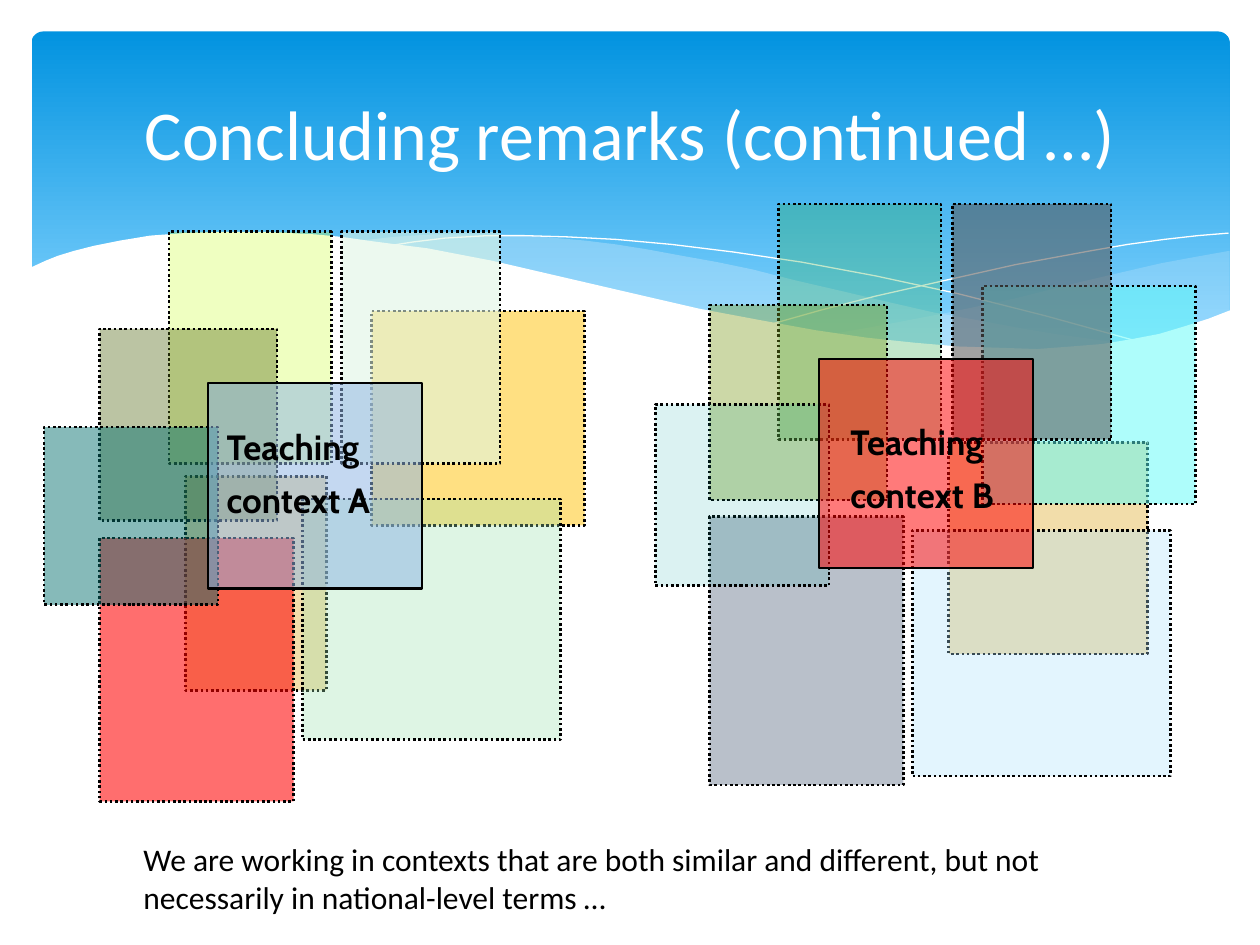
from lxml import etree
from pptx import Presentation
from pptx.dml.color import RGBColor
from pptx.enum.dml import MSO_LINE
from pptx.enum.shapes import MSO_SHAPE
from pptx.enum.text import MSO_ANCHOR, PP_ALIGN
from pptx.oxml.ns import qn
from pptx.util import Inches, Pt

WHITE = RGBColor(0xFF, 0xFF, 0xFF)
BLACK = RGBColor(0x00, 0x00, 0x00)
SKY_TOP = RGBColor(0x02, 0x93, 0xE0)
SKY_BOTTOM = RGBColor(0x83, 0xD3, 0xFE)
PALE_BLUE = RGBColor(0xC6, 0xE7, 0xFC)
OCHRE = RGBColor(0xDC, 0x9F, 0x0C)
AMBER = RGBColor(0xFF, 0xC0, 0x00)
LIME = RGBColor(0xCC, 0xFF, 0x33)
OLIVE = RGBColor(0x52, 0x68, 0x14)
RED = RGBColor(0xFF, 0x00, 0x00)
MINT = RGBColor(0x9D, 0xE3, 0xAE)
PALE_MINT = RGBColor(0xDE, 0xF6, 0xE4)
DARK_TEAL = RGBColor(0x03, 0x70, 0x6E)
SOFT_BLUE = RGBColor(0x8F, 0xB5, 0xE5)
CYAN = RGBColor(0x5A, 0xFB, 0xF8)
GREEN = RGBColor(0x32, 0xAE, 0x51)
MOSS = RGBColor(0x7C, 0x9C, 0x1E)
NAVY = RGBColor(0x04, 0x1F, 0x44)
ICE = RGBColor(0xAD, 0xE2, 0xFE)
GREY = RGBColor(0x59, 0x59, 0x59)
TEAL = RGBColor(0x04, 0xA8, 0xA4)


def set_fill(sp, color, alpha=100):
    """Fill a shape with a solid colour at an opacity given in percent."""
    sp.shadow.inherit = False
    sp.fill.solid()
    sp.fill.fore_color.rgb = color
    if alpha < 100:
        clr = sp.fill._xPr.find(qn("a:solidFill"))[0]
        etree.SubElement(clr, qn("a:alpha")).set("val", str(alpha * 1000))


def add_text(box, lines, size, font, color=BLACK, bold=False, before=0,
             align=PP_ALIGN.LEFT, anchor=MSO_ANCHOR.TOP):
    tf = s.shapes.add_textbox(*map(Inches, box)).text_frame
    tf.word_wrap = True
    tf.vertical_anchor = anchor
    for i, line in enumerate(lines):
        p = tf.paragraphs[0] if i == 0 else tf.add_paragraph()
        p.alignment = align
        p.space_before = Pt(before)
        r = p.add_run()
        r.text = line
        r.font.size = Pt(size)
        r.font.name = font
        r.font.bold = bold
        r.font.color.rgb = color


prs = Presentation()
prs.slide_width, prs.slide_height = Inches(10), Inches(7.5)
s = prs.slides.add_slide(prs.slide_layouts[6])

# Blue banner
banner = s.shapes.add_shape(MSO_SHAPE.ROUNDED_RECTANGLE, Inches(0.25),
                            Inches(0.25), Inches(9.51), Inches(2.7))
banner.adjustments[0] = 0.034
banner.shadow.inherit = False
banner.line.fill.background()
banner.fill.gradient()
banner.fill.gradient_angle = 270
for stop, color, position in zip(banner.fill.gradient_stops,
                                 (SKY_TOP, SKY_BOTTOM), (0, 0.9)):
    stop.color.rgb = color
    stop.position = position

# Waves along the banner's lower edge: points, fill, opacity (no fill: a thin line)
right_wave = [
    (9.76, 1.99), (9.48, 2.04), (9.21, 2.09), (8.91, 2.16), (8.61, 2.23),
    (8.05, 2.37), (7.53, 2.48), (7.06, 2.57), (6.61, 2.65), (6.91, 2.69),
    (7.32, 2.74), (7.69, 2.77), (8.03, 2.78), (8.35, 2.77), (8.63, 2.75),
    (8.89, 2.72), (9.13, 2.67), (9.35, 2.61), (9.63, 2.52), (9.76, 2.47)]
middle_wave = [
    (8.93, 2.73), (8.66, 2.69), (8.37, 2.65), (8.07, 2.6), (7.75, 2.54),
    (7.41, 2.48), (7.06, 2.4), (6.68, 2.31), (6.29, 2.22), (5.98, 2.14),
    (5.69, 2.08), (5.41, 2.03), (5.14, 1.98), (4.89, 1.94), (4.65, 1.91),
    (4.42, 1.89), (4.2, 1.87), (3.8, 1.86), (3.44, 1.86), (3.13, 1.88),
    (2.86, 1.91), (3.23, 1.96), (3.62, 2.03), (4.04, 2.11), (4.49, 2.22),
    (4.91, 2.32), (5.3, 2.4), (5.66, 2.48), (6.01, 2.55), (6.34, 2.61),
    (6.65, 2.66), (6.95, 2.7), (7.22, 2.74), (7.48, 2.76), (7.73, 2.77),
    (8.07, 2.78), (8.38, 2.78), (8.67, 2.76)]
falling_line = [
    (3.09, 1.95), (3.28, 1.92), (3.53, 1.89), (3.87, 1.87), (4.16, 1.87),
    (4.5, 1.88), (4.89, 1.9), (5.33, 1.94), (5.82, 2), (6.36, 2.08),
    (6.95, 2.19), (7.6, 2.33), (8.31, 2.51), (9.07, 2.72)]
rising_line = [
    (6.13, 2.57), (6.52, 2.46), (6.95, 2.35), (7.48, 2.23), (8.06, 2.1),
    (8.66, 1.99), (8.95, 1.94), (9.24, 1.9), (9.51, 1.87), (9.75, 1.85)]
white_wave = [
    (9.77, 2.46), (9.59, 2.53), (9.4, 2.59), (9.2, 2.65), (8.99, 2.69),
    (8.75, 2.73), (8.5, 2.75), (8.23, 2.77), (7.93, 2.76), (7.61, 2.75),
    (7.26, 2.72), (6.88, 2.68), (6.47, 2.62), (6.03, 2.54), (5.55, 2.45),
    (5.03, 2.33), (4.47, 2.2), (3.91, 2.07), (3.65, 2.02), (3.39, 1.97),
    (3.15, 1.94), (2.92, 1.91), (2.71, 1.88), (2.5, 1.86), (2.3, 1.85),
    (2.11, 1.84), (1.77, 1.84), (1.46, 1.85), (1.19, 1.87), (0.95, 1.91),
    (0.75, 1.95), (0.59, 1.99), (0.46, 2.03), (0.36, 2.07), (0.23, 2.13),
    (0.23, 3.29), (9.77, 3.29)]
for points, color, alpha in [
        (right_wave, PALE_BLUE, 29), (middle_wave, PALE_BLUE, 40),
        (falling_line, None, 0), (rising_line, None, 0),
        (white_wave, WHITE, 100)]:
    start, *rest = [(Inches(x), Inches(y)) for x, y in points]
    builder = s.shapes.build_freeform(*start)
    builder.add_line_segments(rest, close=color is not None)
    sp = builder.convert_to_shape()
    if color is not None:
        set_fill(sp, color, alpha)
        sp.line.fill.background()
    else:
        sp.shadow.inherit = False
        sp.fill.background()
        sp.line.color.rgb = WHITE
        sp.line.width = Pt(0)

add_text((0.5, 0.37, 9, 1.37), ["Concluding remarks (continued …)"], 40,
         "Calibri", color=WHITE, align=PP_ALIGN.CENTER, anchor=MSO_ANCHOR.MIDDLE)

# Overlapping contexts; the last rectangle of each is the solid-edged teaching context
context_a = [
    (1.47, 3.78, 1.12, 1.7, OCHRE, 35), (2.95, 2.47, 1.69, 1.7, AMBER, 49),
    (1.34, 1.84, 1.29, 1.84, LIME, 30), (0.79, 2.61, 1.41, 1.52, OLIVE, 39),
    (0.79, 4.27, 1.54, 2.09, RED, 57), (2.4, 3.96, 2.05, 1.91, MINT, 33),
    (2.71, 1.84, 1.26, 1.84, PALE_MINT, 57),
    (0.35, 3.39, 1.38, 1.41, DARK_TEAL, 48),
    (1.65, 3.04, 1.7, 1.63, SOFT_BLUE, 52)]
context_b = [
    (7.53, 3.51, 1.58, 1.68, OCHRE, 35), (7.8, 2.27, 1.69, 1.73, CYAN, 49),
    (6.18, 1.62, 1.29, 1.87, GREEN, 30), (5.63, 2.42, 1.41, 1.55, MOSS, 39),
    (5.63, 4.1, 1.54, 2.13, NAVY, 28), (7.24, 4.21, 2.05, 1.95, ICE, 33),
    (7.56, 1.62, 1.26, 1.87, GREY, 57), (5.2, 3.21, 1.38, 1.44, TEAL, 14),
    (6.5, 2.85, 1.7, 1.66, RED, 52)]
for rects, label, label_box in [
        (context_a, "context A", (1.7, 3.33, 1.6, 0.84)),
        (context_b, "context B", (6.65, 3.29, 1.81, 0.84))]:
    for rect in rects:
        *box, color, alpha = rect
        sp = s.shapes.add_shape(MSO_SHAPE.RECTANGLE, *map(Inches, box))
        set_fill(sp, color, alpha)
        sp.line.color.rgb = BLACK
        sp.line.width = Pt(1.5)
        if rect is not rects[-1]:
            sp.line.dash_style = MSO_LINE.ROUND_DOT
    add_text(label_box, ["Teaching", label], 20, "Cabin", bold=True, before=6)

add_text((1.04, 6.62, 8.01, 0.7),
         ["We are working in contexts that are both similar and different, "
          "but not necessarily in national-level terms …"], 18, "Calibri")

prs.save("out.pptx")
